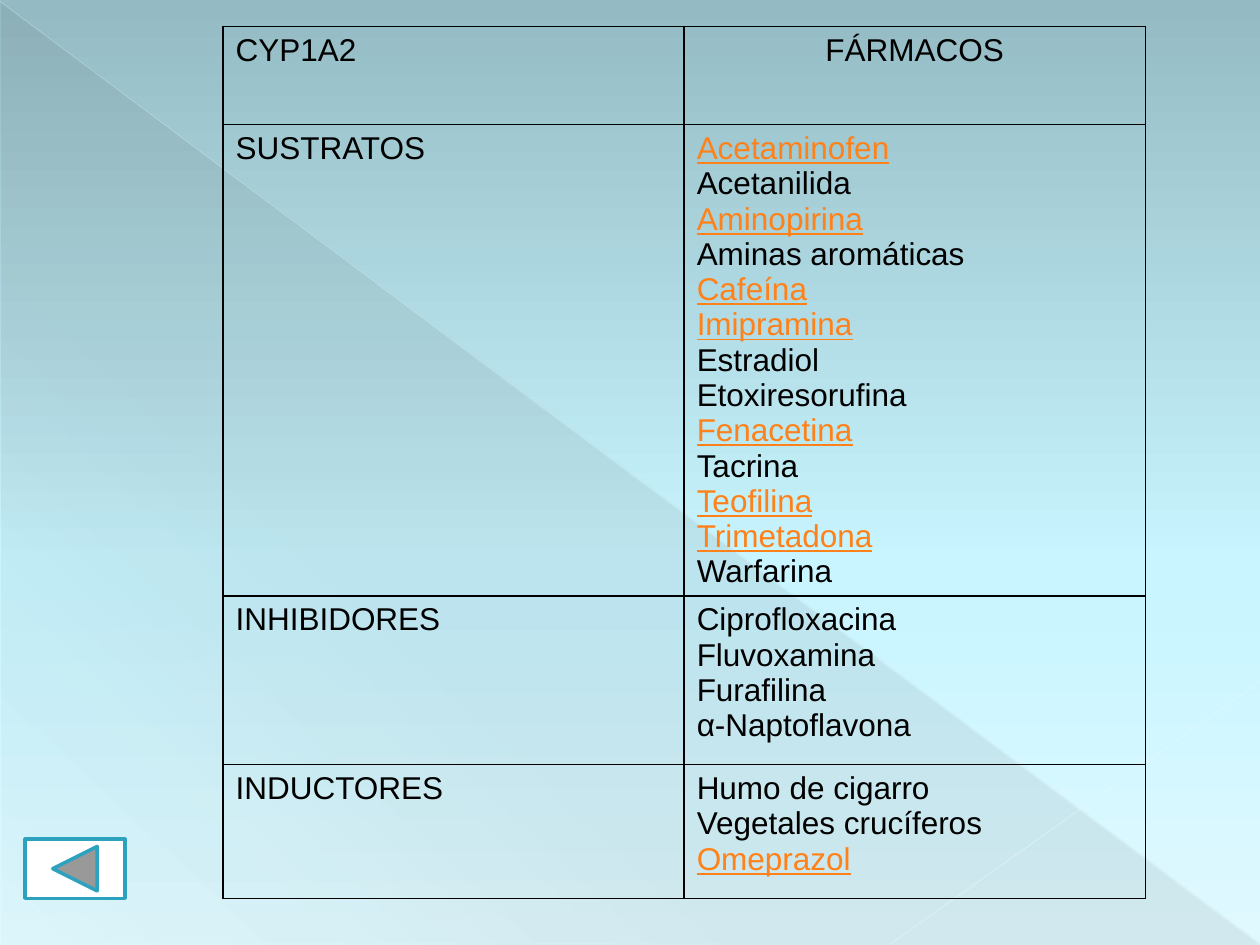
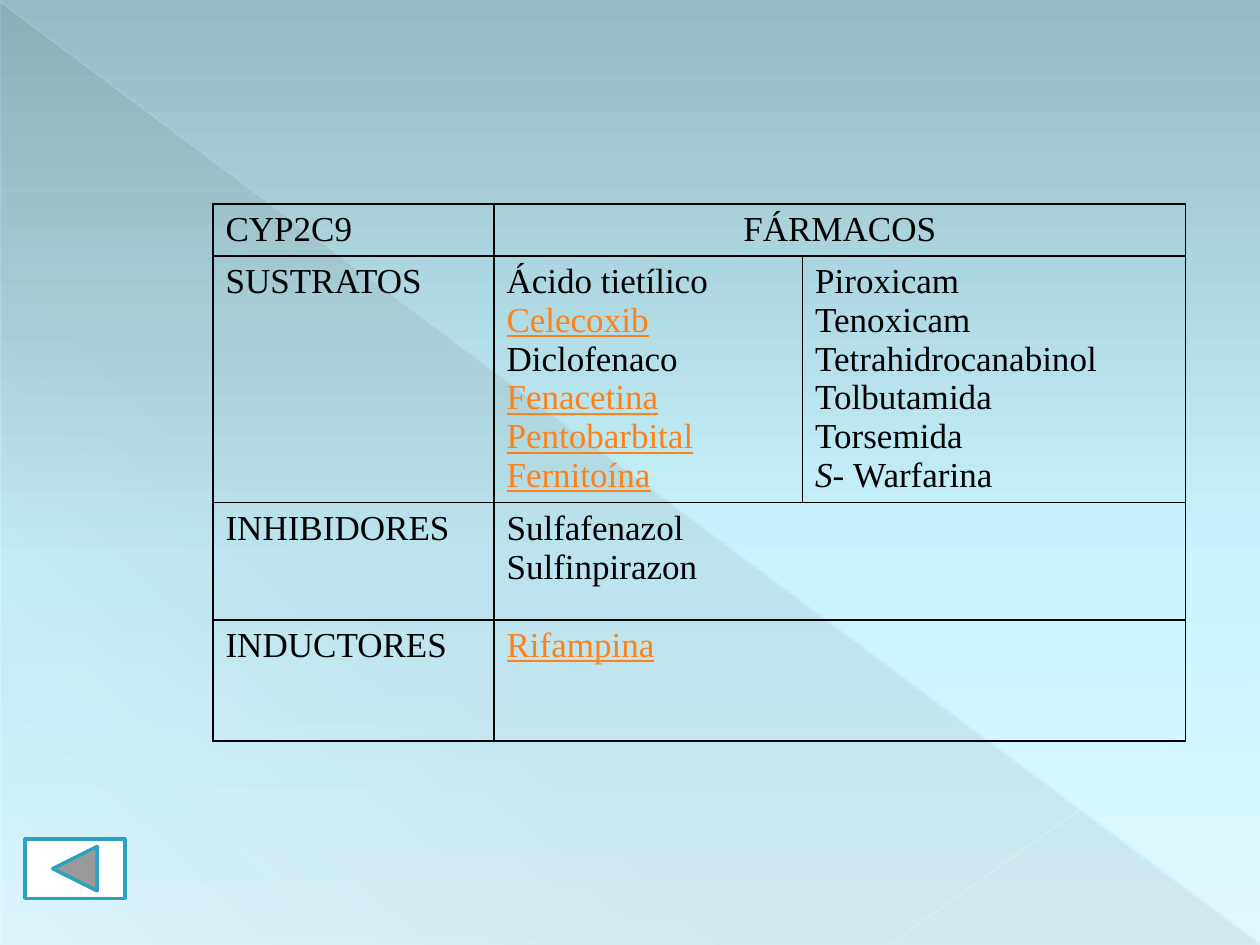
from lxml.etree import SubElement as Sub
from pptx import Presentation
from pptx.dml.color import RGBColor
from pptx.enum.shapes import MSO_CONNECTOR as Link, MSO_SHAPE as Form
from pptx.enum.text import PP_ALIGN as Align
from pptx.oxml.ns import qn
from pptx.util import Inches, Pt

INK, LINK, WHITE, TEAL = "000000", "FF8119", "FFFFFF", "2DA2BF"
SKY = [(0, "94BBC3", 100), (60, "C8F5FF", 100), (100, "DFF9FF", 100)]
SHADE = [(0, "464646", 10), (70, "464646", 8), (100, "464646", 1)]


def rgb(code):
    return RGBColor.from_string(code)


def tint(home, code, alpha=100):
    color = Sub(home, qn("a:srgbClr"), val=code)
    if alpha < 100:
        Sub(color, qn("a:alpha"), val=str(alpha * 1000))


def grade(home, fill, stops, angle):
    fill.gradient()
    grad = home.find(".//" + qn("a:gradFill"))
    grad.clear()
    group = Sub(grad, qn("a:gsLst"))
    for place, code, alpha in stops:
        tint(Sub(group, qn("a:gs"), pos=str(place * 1000)), code, alpha)
    Sub(grad, qn("a:lin"), ang=str(angle * 60000), scaled="0")


class Deck:
    def __init__(self):
        self.show = Presentation()
        self.show.slide_width, self.show.slide_height = Inches(10), Inches(7.5)
        master = self.show.slide_master
        grade(master.element, master.background.fill, SKY, 90)

    def page(self):
        blank = self.show.slide_layouts[6]
        self.shapes = self.show.slides.add_slide(blank).shapes
        shade = self.shape(Form.RIGHT_TRIANGLE, 0.01, 0.02, 9.99, 7.48)
        grade(shade.element, shade.fill, SHADE, 133)
        shade.line.fill.background()
        self.line((0, 0.01), (9.99, 7.49), "EBFBFF", 0.39, 35)
        self.line((10, 5.41), (7.07, 7.49), "EDFCFF", 0.47, 45)

    def shape(self, form, *box):
        shape = self.shapes.add_shape(form, *map(Inches, box))
        shape.shadow.inherit = False
        return shape

    def line(self, start, end, code, width, alpha):
        ends = map(Inches, start + end)
        line = self.shapes.add_connector(Link.STRAIGHT, *ends)
        line.line.width = Pt(width)
        line.line.color.rgb = rgb(code)
        props = line.element.spPr
        color = props.find(".//" + qn("a:srgbClr"))
        Sub(color, qn("a:alpha"), val=str(alpha * 1000))
        Sub(props, qn("a:effectLst"))

    def back(self):
        form = Form.ACTION_BUTTON_BACK_OR_PREVIOUS
        back = self.shape(form, 0.2, 6.66, 0.79, 0.47)
        back.fill.solid()
        back.fill.fore_color.rgb = rgb(WHITE)
        back.line.color.rgb = rgb(TEAL)
        back.line.width = Pt(2)

    def table(self, left, top, wide, high, rows, font, size):
        box = map(Inches, (left, top, sum(wide), sum(high)))
        table = self.shapes.add_table(len(high), len(wide), *box).table
        table.first_row = table.horz_banding = False
        for col, width in zip(table.columns, wide):
            col.width = Inches(width)
        for y, (row, height) in enumerate(zip(rows, high)):
            table.rows[y].height = Inches(height)
            for x, text in enumerate(row):
                cell = table.cell(y, x)
                self.frame(cell)
                if text is None:
                    table.cell(y, x - 1).merge(cell)
                else:
                    self.fill(cell, text, font, size)
        for para in table.cell(0, 1).text_frame.paragraphs:
            para.alignment = Align.CENTER

    def frame(self, cell):
        cell.fill.background()
        props = cell._tc.get_or_add_tcPr()
        for place, side in enumerate("LRTB"):
            edge = Sub(props, qn("a:ln" + side), w=str(Pt(1)))
            tint(Sub(edge, qn("a:solidFill")), INK)
            props.insert(place, edge)

    def fill(self, cell, text, font, size):
        cell.text_frame.text = text.replace("_", "").replace("*", "")
        for para, mark in zip(cell.text_frame.paragraphs, text.split("\n")):
            linked = mark.startswith("_")
            if "*" in mark:
                para.clear()
                for part in mark.split("*"):
                    para.add_run().text = part
                para.runs[0].font.italic = True
            for run in para.runs:
                face = run.font
                face.name, face.size = font, Pt(size)
                face.color.rgb = rgb(LINK if linked else INK)
                face.underline = linked


def main():
    deck = Deck()
    deck.page()
    deck.table(1.77, 0.21, [3.66] * 2, [0.78, 3.74, 1.34, 1.06], [
        ["CYP1A2", "FÁRMACOS"],
        ["SUSTRATOS",
         "_Acetaminofen\nAcetanilida\n_Aminopirina\nAminas aromáticas\n"
         "_Cafeína\n_Imipramina\nEstradiol\nEtoxiresorufina\n_Fenacetina\n"
         "Tacrina\n_Teofilina\n_Trimetadona\nWarfarina"],
        ["INHIBIDORES",
         "Ciprofloxacina\nFluvoxamina\nFurafilina\nα-Naptoflavona"],
        ["INDUCTORES",
         "Humo de cigarro\nVegetales crucíferos\n_Omeprazol"],
    ], "Arial", 18)
    deck.back()

    deck.page()
    deck.table(1.69, 1.62, [2.23, 2.45, 3.04], [0.41, 1.96, 0.93, 0.96], [
        ["CYP2C9", "FÁRMACOS", None],
        ["SUSTRATOS",
         "Ácido tietílico\n_Celecoxib\nDiclofenaco\n_Fenacetina\n"
         "_Pentobarbital\n_Fernitoína",
         "Piroxicam\nTenoxicam\nTetrahidrocanabinol\nTolbutamida\n"
         "Torsemida\nS- *Warfarina"],
        ["INHIBIDORES", "Sulfafenazol\nSulfinpirazon", None],
        ["INDUCTORES", "_Rifampina", None],
    ], "Times New Roman", 20)
    deck.back()
    deck.show.save("out.pptx")


if __name__ == "__main__":
    main()
